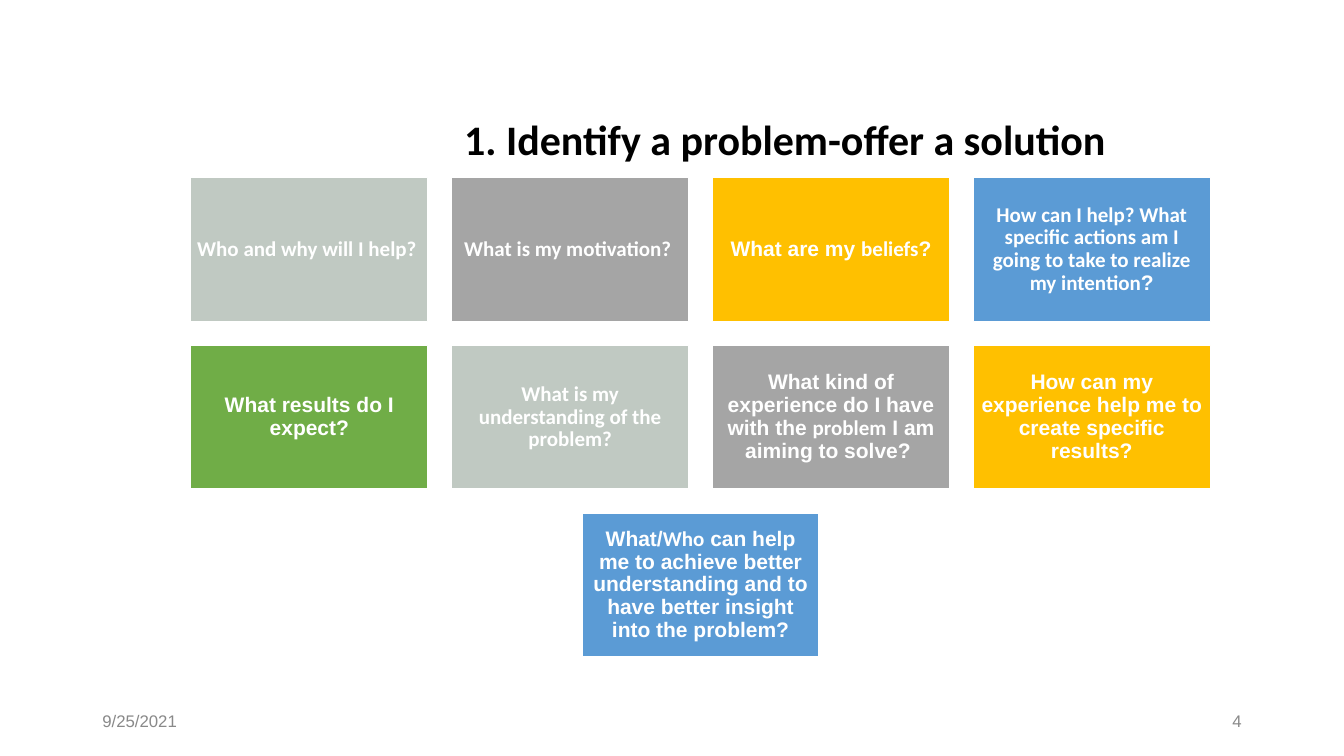
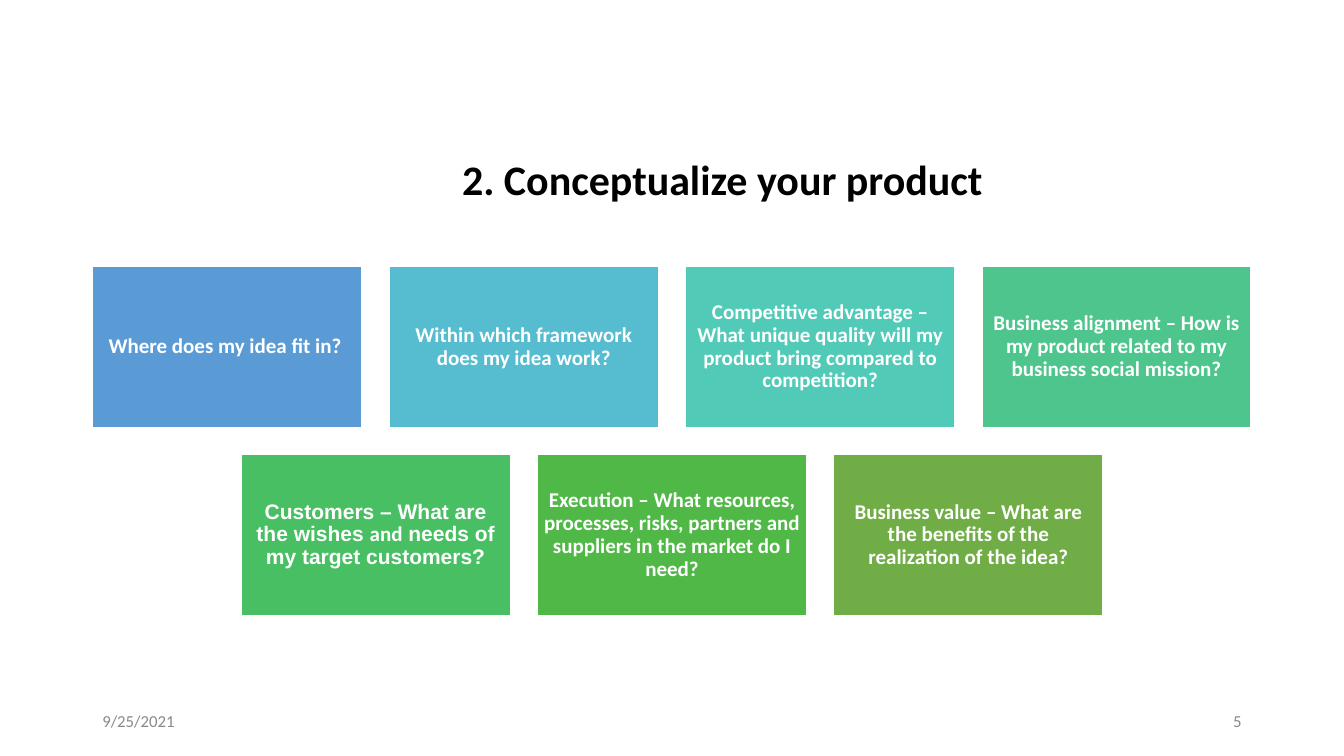
import pptx
import pptx.dml.color
import pptx.enum.shapes
import pptx.enum.text
import pptx.util

Pt = pptx.util.Pt
ALIGN = pptx.enum.text.PP_ALIGN
MIDDLE = pptx.enum.text.MSO_ANCHOR.MIDDLE

COLORS = {
    "black": "000000",
    "white": "FFFFFF",
    "footer": "898989",
    "sage": "C0C9C2",
    "gray": "A5A5A5",
    "gold": "FFC000",
    "blue": "5B9BD5",
    "olive": "70AD47",
    "cyan": "56BCD0",
    "turquoise": "52CAB8",
    "mint": "4DC58D",
    "emerald": "49BF64",
    "green": "50B846",
}
CALIBRI = "Calibri"
ARIAL = "Arial"
OTHER_FONT = {CALIBRI: ARIAL, ARIAL: CALIBRI}
COLUMNS = 4

PROBLEM_CARDS = [
    ("sage", CALIBRI, "Who and why will I help? "),
    ("gray", CALIBRI, "What is my motivation? "),
    ("gold", ARIAL, "What are my |beliefs|?"),
    ("blue", CALIBRI, "How can I help? What specific actions am I going to take "
                      "to realize my intention|?"),
    ("olive", ARIAL, "What results do I expect?"),
    ("sage", CALIBRI, "What is my understanding of the problem?"),
    ("gray", ARIAL, "What kind of experience do I have with the |problem| "
                    "I am aiming to solve? "),
    ("gold", ARIAL, "How can my experience help me to create specific results?"),
    ("blue", ARIAL, "What/|Who| can help me to achieve better understanding "
                    "and to have better insight into the problem?"),
]
PRODUCT_CARDS = [
    ("blue", CALIBRI, "Where does my idea fit in? "),
    ("cyan", CALIBRI, "Within which framework does my idea work?"),
    ("turquoise", CALIBRI, "Competitive advantage – What unique quality will my "
                           "product bring compared to competition?"),
    ("mint", CALIBRI, "Business alignment – How is my product related to my "
                      "business social mission?"),
    ("emerald", ARIAL, "Customers – What are the wishes |and| needs of my "
                       "target customers?"),
    ("green", CALIBRI, "Execution – What resources, processes, risks, partners "
                       "and suppliers in the market do I need?"),
    ("olive", CALIBRI, "Business value – What are the benefits of the "
                       "realization of the idea?"),
]


def rgb(name):
    return pptx.dml.color.RGBColor.from_string(COLORS[name])


def format_paragraph(p, font, size, color, align, bold=False):
    p.alignment = align
    p.font.name = font
    p.font.size = Pt(size)
    p.font.bold = bold
    p.font.color.rgb = rgb(color)


def add_title(s, text, left, top, width, height):
    title = s.shapes.title
    title.left, title.top = Pt(left), Pt(top)
    title.width, title.height = Pt(width), Pt(height)
    tf = title.text_frame
    tf.text = text
    tf.auto_size = pptx.enum.text.MSO_AUTO_SIZE.NONE
    tf.vertical_anchor = MIDDLE
    p = tf.paragraphs[0]
    p.line_spacing = 0.9
    format_paragraph(p, CALIBRI, 30, "black", ALIGN.CENTER, bold=True)


def add_footer(s, number, font):
    for text, left, align in (("9/25/2021", 66, ALIGN.LEFT),
                              (str(number), 678, ALIGN.RIGHT)):
        tf = s.shapes.add_textbox(Pt(left), Pt(500.5), Pt(216), Pt(28.8)).text_frame
        tf.word_wrap = True
        tf.vertical_anchor = MIDDLE
        tf.text = text
        format_paragraph(tf.paragraphs[0], font, 12, "footer", align)


def add_card(s, card, left, top, width, height):
    color, font, text = card
    sp = s.shapes.add_shape(pptx.enum.shapes.MSO_SHAPE.RECTANGLE,
                            Pt(left), Pt(top), Pt(width), Pt(height))
    sp.shadow.inherit = False
    sp.fill.solid()
    sp.fill.fore_color.rgb = rgb(color)
    sp.line.color.rgb = rgb("white")
    sp.line.width = Pt(1)
    tf = sp.text_frame
    tf.word_wrap = True
    tf.vertical_anchor = MIDDLE
    tf.margin_left = tf.margin_right = tf.margin_top = tf.margin_bottom = Pt(4.5)
    p = tf.paragraphs[0]
    p.line_spacing = 0.9
    p.space_after = Pt(6)
    format_paragraph(p, font, 15, "white", ALIGN.CENTER, bold=True)
    for i, part in enumerate(text.split("|")):
        r = p.add_run()
        r.text = part
        if i % 2:
            r.font.name = OTHER_FONT[font]


def add_card_grid(s, cards, center, top, width, height, gap):
    for start in range(0, len(cards), COLUMNS):
        row = cards[start:start + COLUMNS]
        left = center - (len(row) * (width + gap) - gap) / 2
        y = top + start // COLUMNS * (height + gap)
        for i, card in enumerate(row):
            add_card(s, card, left + i * (width + gap), y, width, height)


def add_slide(prs, title, title_box, number, footer_font, cards, grid):
    s = prs.slides.add_slide(prs.slide_layouts[5])
    add_title(s, title, *title_box)
    add_footer(s, number, footer_font)
    add_card_grid(s, cards, *grid)


def main():
    prs = pptx.Presentation()
    prs.slide_width, prs.slide_height = Pt(960), Pt(540)
    add_slide(prs, "1. Identify a problem-offer a solution", (189.4, 80, 743, 43),
              4, ARIAL, PROBLEM_CARDS, (500.4, 126.8, 169.3, 102.8, 17))
    add_slide(prs, "2. Conceptualize your product", (102.2, 77.8, 828, 104.4),
              5, CALIBRI, PRODUCT_CARDS, (480, 190.2, 192.4, 115.2, 19.3))
    prs.save("out.pptx")


if __name__ == "__main__":
    main()
